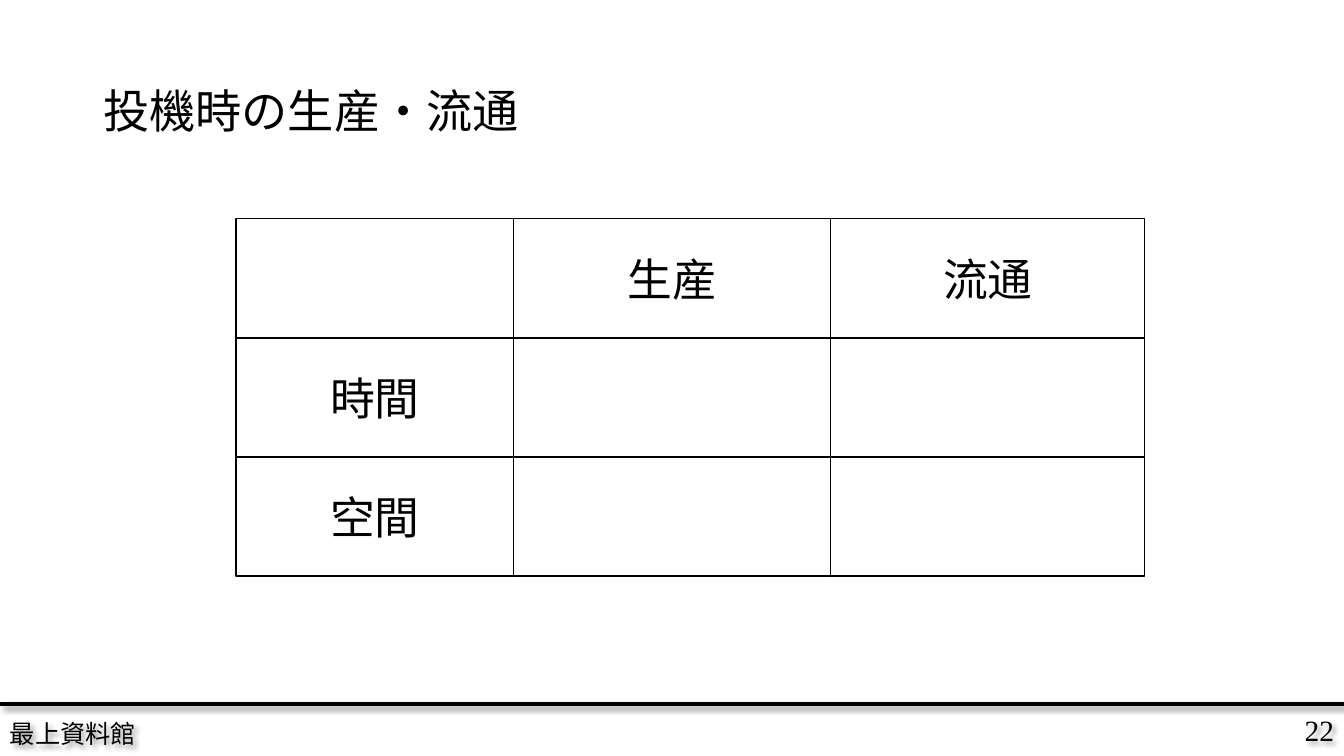
from itertools import accumulate

from lxml.etree import SubElement
from pptx import Presentation
from pptx.dml.color import RGBColor
from pptx.enum.shapes import MSO_CONNECTOR, MSO_SHAPE
from pptx.enum.text import MSO_ANCHOR, MSO_AUTO_SIZE, PP_ALIGN
from pptx.oxml.ns import qn
from pptx.util import Emu, Pt

BLACK = RGBColor(0, 0, 0)
LATIN_FONT = "Times New Roman"
JAPANESE_FONT = "Noto Sans CJK JP"
EMU_PER_INCH, PX_PER_INCH = 914400, 100.8
SLIDE_WIDTH, SLIDE_HEIGHT = 1344, 756
FOOTER_TOP = 704

COLUMN_WIDTHS = [278, 317, 314]
ROW_HEIGHT = 119
GRID_ROWS = [
    ["", "生産", "流通"],
    ["時間", "", ""],
    ["空間", "", ""],
]


def px(length):
    return Emu(round(length * EMU_PER_INCH / PX_PER_INCH))


class SlideBuilder:
    def __init__(self, presentation):
        self.slide = presentation.slides.add_slide(presentation.slide_layouts[5])

    def format_text(self, text_frame, size, alignment, latin=LATIN_FONT):
        text_frame.vertical_anchor = MSO_ANCHOR.MIDDLE
        for paragraph in text_frame.paragraphs:
            paragraph.alignment = alignment
            for run in paragraph.runs:
                run.font.size = Pt(size)
                run.font.name = latin
                run.font.color.rgb = BLACK
                east_asian = SubElement(run.font._element, qn("a:ea"))
                east_asian.set("typeface", JAPANESE_FONT)

    def add_shadow(self, shape):
        """Give the shape a soft black shadow towards the lower right."""
        effects = SubElement(shape._element.spPr, qn("a:effectLst"))
        shadow = SubElement(effects, qn("a:outerShdw"), blurRad=str(Pt(4)),
                            dist=str(Pt(3)), dir=str(45 * 60000), algn="tl")
        color = SubElement(shadow, qn("a:srgbClr"), val=str(BLACK))
        SubElement(color, qn("a:alpha"), val="40000")

    def title(self, text, left, top, width, height):
        title = self.slide.shapes.title
        title.left, title.top = px(left), px(top)
        title.width, title.height = px(width), px(height)
        text_frame = title.text_frame
        text_frame.text = text
        text_frame.auto_size = MSO_AUTO_SIZE.NONE
        text_frame.paragraphs[0].line_spacing = 0.9
        self.format_text(text_frame, 33, PP_ALIGN.LEFT, JAPANESE_FONT)

    def footer_text(self, text, left, top, width, height, size, alignment):
        box = self.slide.shapes.add_textbox(px(left), px(top), px(width), px(height))
        box.text_frame.text = text
        box.text_frame.word_wrap = True
        self.format_text(box.text_frame, size, alignment)
        self.add_shadow(box)

    def rule(self, y):
        line = self.slide.shapes.add_connector(
            MSO_CONNECTOR.STRAIGHT, 0, px(y), px(SLIDE_WIDTH), px(y))
        line.line.color.rgb = BLACK
        line.line.width = Pt(3)
        self.add_shadow(line)

    def cell(self, text, left, top, width, height):
        shape = self.slide.shapes.add_shape(
            MSO_SHAPE.RECTANGLE, px(left), px(top), px(width), px(height))
        shape.shadow.inherit = False
        shape.fill.background()
        shape.line.color.rgb = BLACK
        shape.line.width = Pt(0.75)
        if text:
            shape.text_frame.text = text
            shape.text_frame.word_wrap = False
            self.format_text(shape.text_frame, 32, PP_ALIGN.CENTER)

    def grid(self, rows, left, top, column_widths, row_height):
        lefts = list(accumulate(column_widths, initial=left))
        for row_index, texts in enumerate(rows):
            row_top = top + row_index * row_height
            for text, cell_left, width in zip(texts, lefts, column_widths):
                self.cell(text, cell_left, row_top, width, row_height)


def main():
    presentation = Presentation()
    presentation.slide_width = px(SLIDE_WIDTH)
    presentation.slide_height = px(SLIDE_HEIGHT)
    builder = SlideBuilder(presentation)
    builder.footer_text("22", 1164, FOOTER_TOP, 180, 51, 21, PP_ALIGN.RIGHT)
    builder.footer_text("最上資料館", 0, 711, 363, 45, 18, PP_ALIGN.LEFT)
    builder.rule(FOOTER_TOP)
    builder.title("投機時の生産・流通", 93, 41, 1159, 146)
    builder.grid(GRID_ROWS, 236, 219, COLUMN_WIDTHS, ROW_HEIGHT)
    presentation.save("out.pptx")


if __name__ == "__main__":
    main()
